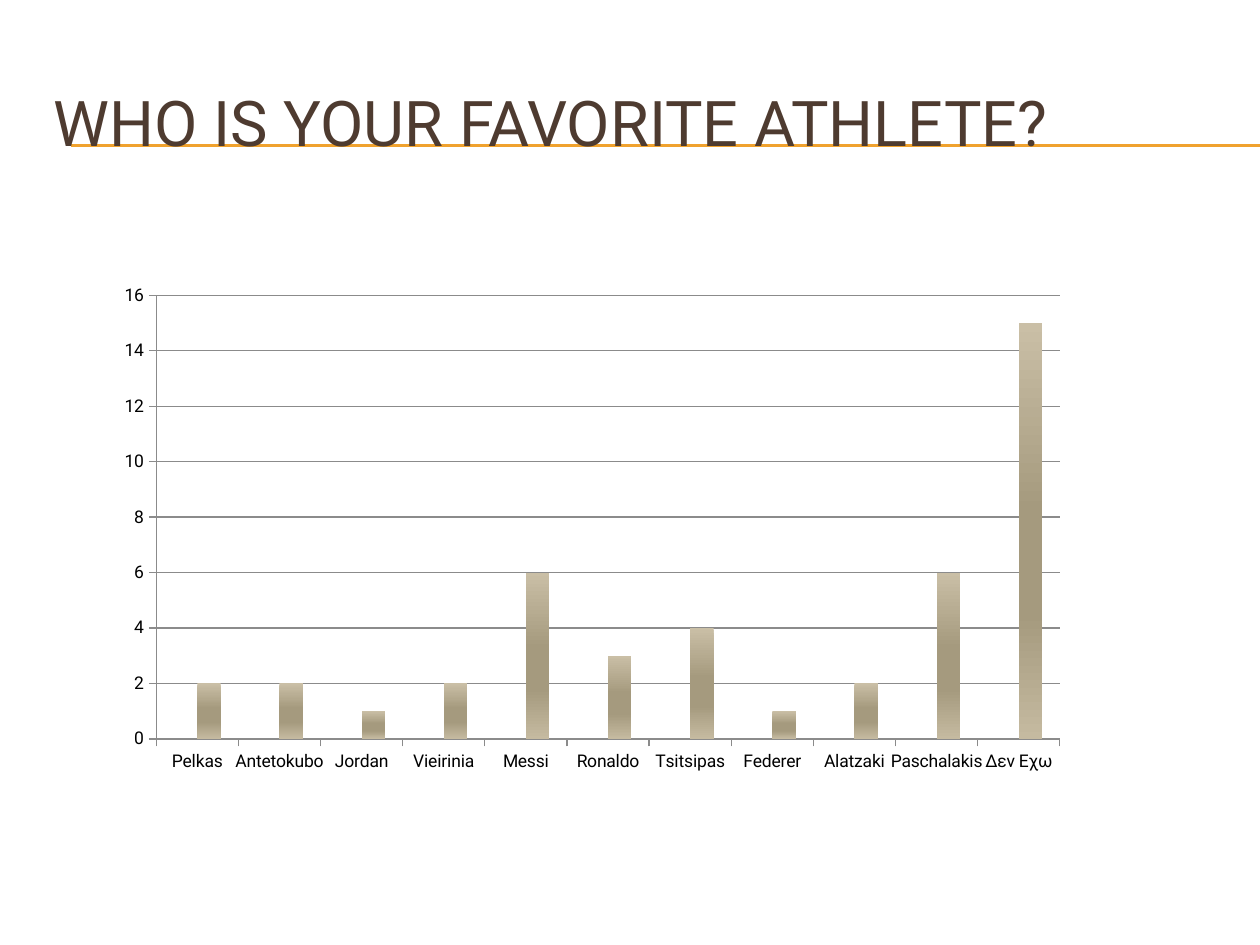
from lxml.etree import SubElement
from pptx import Presentation
from pptx.chart.data import CategoryChartData
from pptx.dml.color import RGBColor as Color
from pptx.enum.chart import XL_CHART_TYPE as ChartType, XL_TICK_MARK as TickMark
from pptx.enum.shapes import MSO_CONNECTOR as Connector
from pptx.enum.text import MSO_ANCHOR as Anchor
from pptx.oxml import parse_xml
from pptx.oxml.ns import nsdecls, qn
from pptx.util import Inches, Pt

# Content
TITLE = "WHO IS YOUR FAVORITE ATHLETE?"
VOTES = {
    "Pelkas": 2, "Antetokubo": 2, "Jordan": 1, "Vieirinia": 2,
    "Messi": 6, "Ronaldo": 3, "Tsitsipas": 4, "Federer": 1,
    "Alatzaki": 2, "Paschalakis": 6, "Δεν Εχω": 15,
}

THEME = {
    "font": "Roboto", "title_size": 36, "chart_size": 10,
    "title": "4E3B30", "rule": "F0A22E", "text": "000000", "grid": "8B8B8B",
    # Bar shading from top to bottom: percent, colour
    "bars": [(0, "CABFA6"), (45, "A59A7E"), (70, "A59A7E"), (100, "C5BAA0")],
}
WIDTH, HEIGHT = 10, 7.5
RULE_LEFT, RULE_TOPS = 0.56, (1.15, 1.16)
TITLE_BOX = (0.33, 0.5, 9.5, 0.92)
CHART_BOX = (0.43, 2.14, 9.64, 5.36)
PLOT_SHARES = {"x": 0.084, "y": 0.038, "w": 0.744, "h": 0.657}


def style_font(font, size, color):
    font.name = THEME["font"]
    font.size = Pt(size)
    font.bold = False
    font.color.rgb = Color.from_string(color)


def style_line(line, color):
    line.color.rgb = Color.from_string(color)
    line.width = Pt(0.75)


def add_rule(slide, top):
    rule = slide.shapes.add_connector(
        Connector.STRAIGHT, *map(Inches, (RULE_LEFT, top, WIDTH, top)))
    style_line(rule.line, THEME["rule"])
    SubElement(rule._element.spPr, qn("a:effectLst"))


def add_title(slide):
    frame = slide.shapes.add_textbox(*map(Inches, TITLE_BOX)).text_frame
    frame.word_wrap = True
    frame.vertical_anchor = Anchor.MIDDLE
    run = frame.paragraphs[0].add_run()
    run.text = TITLE
    style_font(run.font, THEME["title_size"], THEME["title"])


def place_plot(chart):
    places = "".join(f'<c:{side} val="{share}"/>' for side, share in PLOT_SHARES.items())
    layout = parse_xml(
        f'<c:layout {nsdecls("c")}><c:manualLayout><c:layoutTarget val="inner"/>'
        f'<c:xMode val="edge"/><c:yMode val="edge"/>{places}</c:manualLayout></c:layout>')
    plot_area = chart._chartSpace.chart.plotArea
    for old in plot_area.findall(qn("c:layout")):
        plot_area.remove(old)
    plot_area.insert(0, layout)


def shade_bars(series):
    stops = "".join(f'<a:gs pos="{percent * 1000}"><a:srgbClr val="{color}"/></a:gs>'
                    for percent, color in THEME["bars"])
    series.format.fill.background()
    properties = series._element.spPr
    properties.replace(properties.find(qn("a:noFill")), parse_xml(
        f'<a:gradFill {nsdecls("a")} rotWithShape="1"><a:gsLst>{stops}</a:gsLst>'
        '<a:lin ang="5400000" scaled="0"/></a:gradFill>'))


def add_vote_chart(slide):
    data = CategoryChartData()
    data.categories = list(VOTES)
    data.add_series("Series 1", [None] * len(VOTES))
    data.add_series("Series 2", list(VOTES.values()))
    chart = slide.shapes.add_chart(
        ChartType.COLUMN_CLUSTERED, *map(Inches, CHART_BOX), data).chart
    chart.has_legend = False
    chart.has_title = False
    style_font(chart.font, THEME["chart_size"], THEME["text"])
    place_plot(chart)

    # Axes and grid
    for axis in (chart.category_axis, chart.value_axis):
        axis.major_tick_mark = TickMark.OUTSIDE
        axis.minor_tick_mark = TickMark.NONE
        style_line(axis.format.line, THEME["grid"])
    values = chart.value_axis
    values.minimum_scale, values.maximum_scale, values.major_unit = 0, 16, 2
    values.has_major_gridlines = True
    style_line(values.major_gridlines.format.line, THEME["grid"])

    # Bars
    plot = chart.plots[0]
    plot.vary_by_categories = False
    plot.gap_width, plot.overlap = 150, 0
    empty, votes = plot.series
    empty.format.fill.solid()
    empty.format.fill.fore_color.rgb = Color.from_string(THEME["rule"])
    shade_bars(votes)


def main():
    presentation = Presentation()
    presentation.slide_width, presentation.slide_height = Inches(WIDTH), Inches(HEIGHT)
    slide = presentation.slides.add_slide(presentation.slide_layouts[6])
    for top in RULE_TOPS:
        add_rule(slide, top)
    add_title(slide)
    add_vote_chart(slide)
    presentation.save("out.pptx")


if __name__ == "__main__":
    main()
